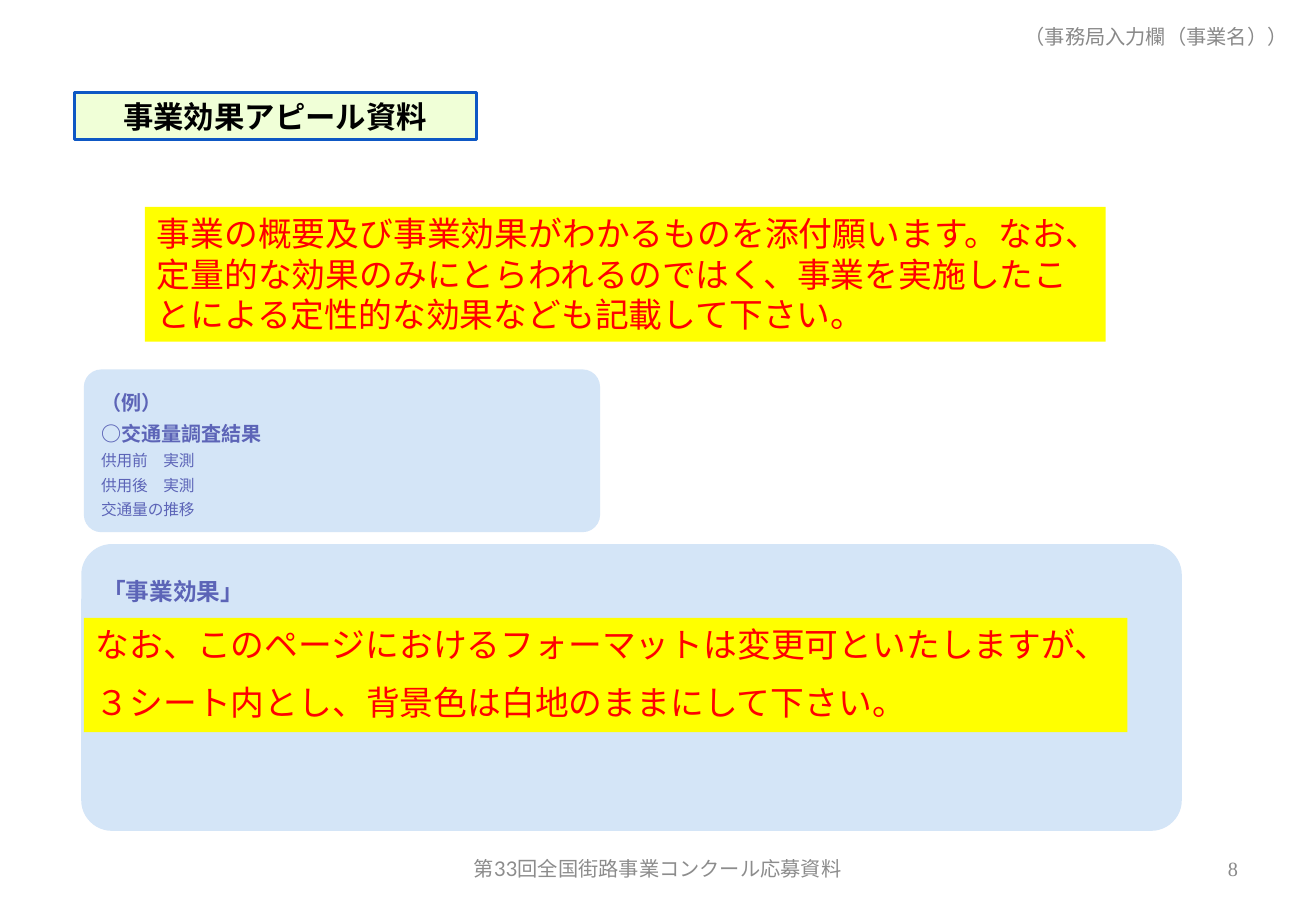
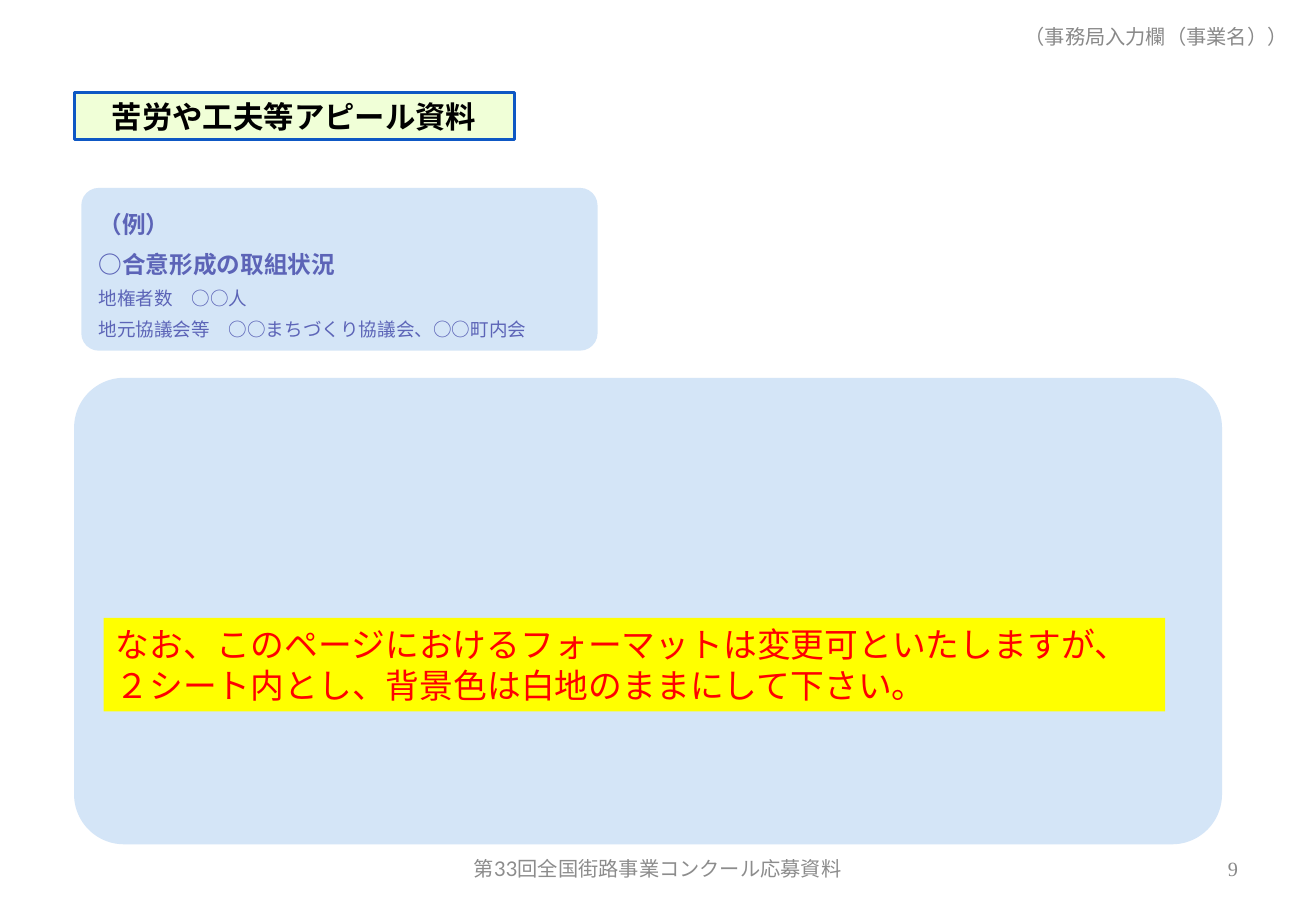
from dataclasses import dataclass

import pptx
import pptx.dml.color
import pptx.enum.shapes
import pptx.enum.text
import pptx.oxml
import pptx.oxml.ns
import pptx.util
from lxml import etree

Pt = pptx.util.Pt
ALIGN = pptx.enum.text.PP_ALIGN
ANCHOR = pptx.enum.text.MSO_ANCHOR
SHAPE = pptx.enum.shapes.MSO_SHAPE

PANEL_FILL, PANEL_TEXT = "D4E5F7", "5C64B7"
TITLE_FILL, TITLE_LINE, TITLE_TEXT = "F0FFD7", "0E58C4", "000000"
NOTICE_FILL, NOTICE_TEXT = "FFFF00", "FF0000"
NUMBER_TEXT, FOOTER_TEXT = "898989", "8C8C8C"
PANEL_ROUNDING, TITLE_ROUNDING = 0.107, 0.308


@dataclass(frozen=True)
class Box:
    left: float
    top: float
    width: float
    height: float


@dataclass(frozen=True)
class Style:
    font: str
    size: float
    color: str
    bold: bool = False
    align: ALIGN = ALIGN.LEFT
    line_spacing: float = 1.0


@dataclass(frozen=True)
class Notice:
    box: Box
    paragraphs: tuple[str, ...]


@dataclass(frozen=True)
class Example:
    box: Box
    headings: tuple[str, ...]
    details: tuple[str, ...]
    heading_size: float
    detail_size: float
    line_spacing: float


@dataclass(frozen=True)
class Page:
    number: int
    title: str
    title_width: float
    example: Example
    panel: Box
    panel_heading: str
    notices: tuple[Notice, ...]


TITLE_STYLE = Style("Arial", 18, TITLE_TEXT, bold=True, align=ALIGN.CENTER)
NOTICE_STYLE = Style("Times New Roman", 20, NOTICE_TEXT)
PANEL_STYLE = Style("Arial", 14, PANEL_TEXT, bold=True)
NUMBER_STYLE = Style("Times New Roman", 12, NUMBER_TEXT, align=ALIGN.RIGHT)
FOOTER_STYLE = Style("Lato", 12, FOOTER_TEXT, align=ALIGN.CENTER)

PAGES = (
    Page(
        8, "事業効果アピール資料", 238.3,
        Example(
            Box(49.7, 219, 306, 96.5),
            ("（例）", "○交通量調査結果"),
            ("供用前　実測", "供用後　実測", "交通量の推移"),
            11.9, 9.3, 1.3,
        ),
        Box(48.2, 322.5, 652.3, 170), "「事業効果」",
        (
            Notice(Box(85.8, 122.6, 569.5, 80), (
                "事業の概要及び事業効果がわかるものを添付願います。なお、定量的な効果のみにとらわれるのではく、"
                "事業を実施したことによる定性的な効果なども記載して下さい。",
            )),
            Notice(Box(49.7, 366.3, 618.5, 67.7), (
                "なお、このページにおけるフォーマットは変更可といたしますが、",
                "３シート内とし、背景色は白地のままにして下さい。",
            )),
        ),
    ),
    Page(
        9, "苦労や工夫等アピール資料", 260.8,
        Example(
            Box(48.2, 111.4, 306, 96.5),
            ("（例）", "○合意形成の取組状況"),
            ("地権者数　○○人", "地元協議会等　○○まちづくり協議会、○○町内会"),
            14, 11, 1.4,
        ),
        Box(43.9, 224, 680.4, 276.5), "",
        (
            Notice(Box(61.4, 366.3, 629.3, 55.5), (
                "なお、このページにおけるフォーマットは変更可といたしますが、"
                "２シート内とし、背景色は白地のままにして下さい。",
            )),
        ),
    ),
)


def rgb(color: str) -> pptx.dml.color.RGBColor:
    return pptx.dml.color.RGBColor.from_string(color)


def format_paragraph(para, style: Style) -> None:
    """Apply the style and clear any inherited bullet, indent and spacing."""
    properties = para._p.get_or_add_pPr()
    properties.set("marL", "0")
    properties.set("indent", "0")
    etree.SubElement(properties, pptx.oxml.ns.qn("a:buNone"))
    para.alignment = style.align
    para.line_spacing = style.line_spacing
    para.space_before = Pt(0)
    para.font.name = style.font
    para.font.size = Pt(style.size)
    para.font.bold = style.bold
    para.font.color.rgb = rgb(style.color)


def write(shape, lines: list[tuple[str, Style]], anchor: ANCHOR, gap: float = 0) -> None:
    """Write one paragraph per line, with gap points between them."""
    frame = shape.text_frame
    frame.word_wrap = True
    frame.auto_size = pptx.enum.text.MSO_AUTO_SIZE.NONE
    frame.vertical_anchor = anchor
    for index, (text, style) in enumerate(lines):
        para = frame.add_paragraph() if index else frame.paragraphs[0]
        para.text = text
        format_paragraph(para, style)
        if index:
            para.space_before = Pt(gap)


def place(shape, box: Box) -> None:
    shape.left, shape.top = Pt(box.left), Pt(box.top)
    shape.width, shape.height = Pt(box.width), Pt(box.height)


def paint(shape, fill: str) -> None:
    shape.fill.solid()
    shape.fill.fore_color.rgb = rgb(fill)


def round_placeholder(shape, box: Box, fill: str, rounding: float) -> None:
    """Move a placeholder and give it a filled, rounded outline."""
    place(shape, box)
    geometry = etree.SubElement(shape.element.spPr, pptx.oxml.ns.qn("a:prstGeom"))
    geometry.set("prst", "roundRect")
    shape.adjustments[0] = rounding
    paint(shape, fill)


def add_block(slide, kind: SHAPE, box: Box, fill: str):
    block = slide.shapes.add_shape(
        kind, Pt(box.left), Pt(box.top), Pt(box.width), Pt(box.height))
    block.shadow.inherit = False
    block.line.fill.background()
    paint(block, fill)
    return block


def add_label(slide, box: Box, text: str, style: Style) -> None:
    label = slide.shapes.add_textbox(
        Pt(box.left), Pt(box.top), Pt(box.width), Pt(box.height))
    write(label, [(text, style)], ANCHOR.MIDDLE)


def add_title(slide, page: Page) -> None:
    title = slide.shapes.title
    round_placeholder(title, Box(43.9, 54.7, page.title_width, 28.1),
                      TITLE_FILL, TITLE_ROUNDING)
    title.line.color.rgb = rgb(TITLE_LINE)
    title.line.width = Pt(1.75)
    title.text_frame.margin_top = title.text_frame.margin_bottom = Pt(0)
    write(title, [(page.title, TITLE_STYLE)], ANCHOR.MIDDLE)


def add_example(slide, example: Example) -> None:
    body = slide.placeholders[1]
    round_placeholder(body, example.box, PANEL_FILL, PANEL_ROUNDING)
    heading = Style("Arial", example.heading_size, PANEL_TEXT, bold=True,
                    line_spacing=example.line_spacing)
    detail = Style("Arial", example.detail_size, PANEL_TEXT,
                   line_spacing=example.line_spacing)
    lines = [(text, heading) for text in example.headings]
    lines += [(text, detail) for text in example.details]
    write(body, lines, ANCHOR.MIDDLE)


def add_panel(slide, page: Page) -> None:
    panel = add_block(slide, SHAPE.ROUNDED_RECTANGLE, page.panel, PANEL_FILL)
    panel.adjustments[0] = PANEL_ROUNDING
    if page.panel_heading:
        panel.text_frame.margin_top = Pt(14)
        write(panel, [(page.panel_heading, PANEL_STYLE)], ANCHOR.TOP)


def add_notice(slide, notice: Notice) -> None:
    block = add_block(slide, SHAPE.RECTANGLE, notice.box, NOTICE_FILL)
    lines = [(text, NOTICE_STYLE) for text in notice.paragraphs]
    write(block, lines, ANCHOR.TOP, gap=NOTICE_STYLE.size / 2)


def add_page(deck, page: Page) -> None:
    slide = deck.slides.add_slide(deck.slide_layouts[1])
    add_title(slide, page)
    add_example(slide, page.example)
    add_panel(slide, page)
    for notice in page.notices:
        add_notice(slide, notice)
    add_label(slide, Box(588.2, 7.2, 182.2, 28.8), "（事務局入力欄（事業名））", NUMBER_STYLE)
    add_label(slide, Box(266.4, 500.4, 247, 28.8),
              "第33回全国街路事業コンクール応募資料", FOOTER_STYLE)
    add_label(slide, Box(558.7, 500.4, 182.2, 28.8), str(page.number), NUMBER_STYLE)


def main() -> None:
    deck = pptx.Presentation()
    deck.slide_width, deck.slide_height = Pt(780), Pt(540)
    for page in PAGES:
        add_page(deck, page)
    deck.save("out.pptx")


if __name__ == "__main__":
    main()
